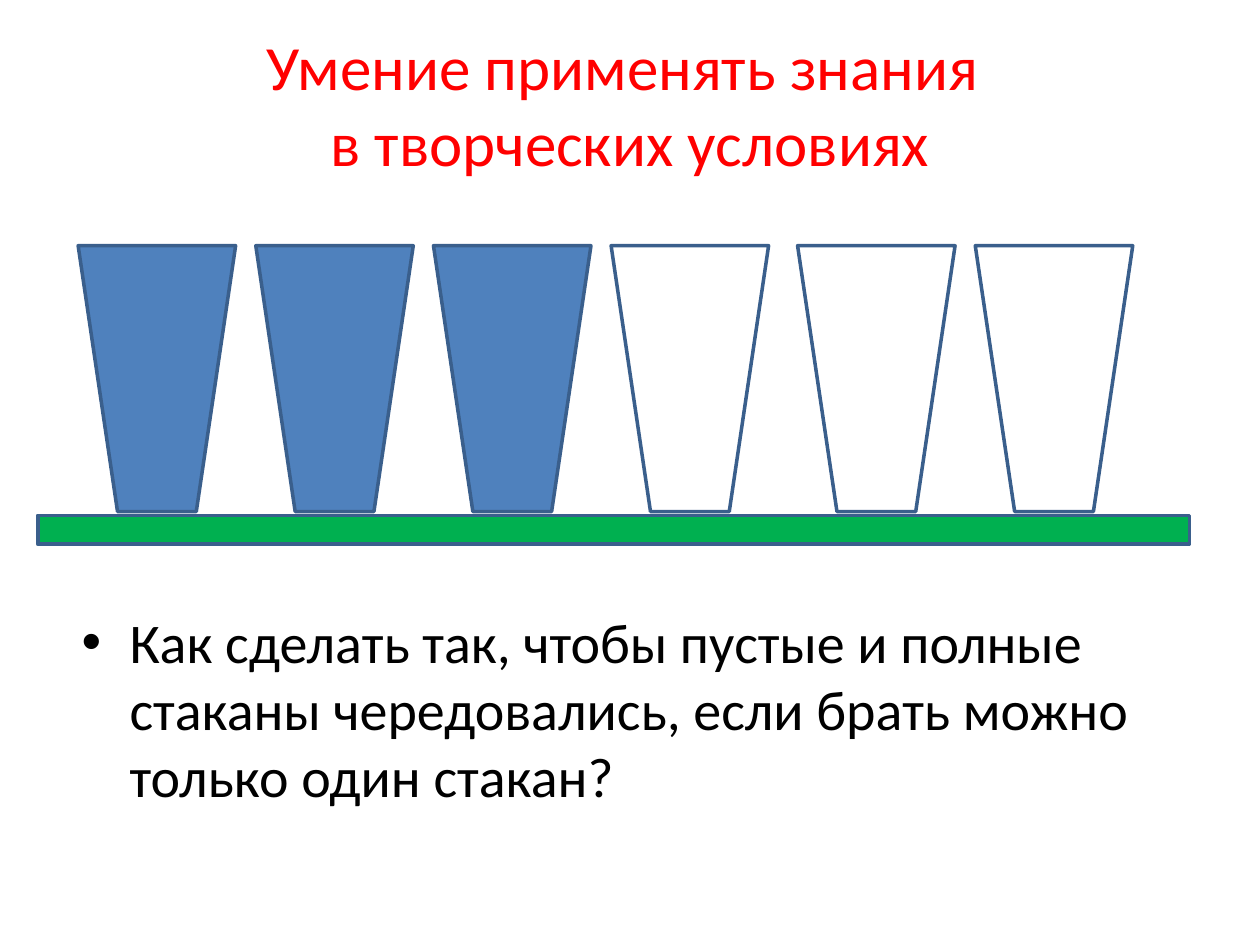
import pptx
import pptx.util
import pptx.dml.color
import pptx.enum.shapes
import pptx.enum.text
import lxml.etree
from dataclasses import dataclass

Inches = pptx.util.Inches
Pt = pptx.util.Pt
Shape = pptx.enum.shapes.MSO_SHAPE
Align = pptx.enum.text.PP_ALIGN
Anchor = pptx.enum.text.MSO_ANCHOR


@dataclass(frozen=True)
class Theme:
    font: str = "Calibri"
    title_size: int = 36
    question_size: int = 32
    outline_width: int = 2
    title: str = "FF0000"
    text: str = "000000"
    water: str = "4F81BD"
    table: str = "00B050"
    outline: str = "3A5F8C"


THEME = Theme()
FULL_GLASSES, GLASSES = 3, 6
GLASS_LEFT, GLASS_PITCH = 0.62, 1.41
SECOND_GROUP_START, SECOND_GROUP_SHIFT = 4, 0.07


def color(value):
    return pptx.dml.color.RGBColor.from_string(value)


def set_format(target, values):
    for name, value in values.items():
        setattr(target, name, value)


def add_outlined(slide, preset, box, fill=None):
    shape = slide.shapes.add_shape(preset, *map(Inches, box))
    shape.shadow.inherit = False
    if fill:
        shape.fill.solid()
        shape.fill.fore_color.rgb = color(fill)
    else:
        shape.fill.background()
    shape.line.color.rgb = color(THEME.outline)
    shape.line.width = Pt(THEME.outline_width)
    return shape


def add_text(slide, box, text, size, ink, frame_format, align):
    frame = slide.shapes.add_textbox(*map(Inches, box)).text_frame
    set_format(frame, {"word_wrap": True, **frame_format})
    paragraph = frame.paragraphs[0]
    paragraph.text = text
    paragraph.alignment = align
    for run in paragraph.runs:
        set_format(run.font, {"name": THEME.font, "size": Pt(size)})
        run.font.color.rgb = color(ink)
    return paragraph


def add_bullet(paragraph, indent):
    properties = paragraph._p.get_or_add_pPr()
    properties.set("marL", str(Inches(indent)))
    properties.set("indent", str(-Inches(indent)))
    for tag, key, value in (("buFont", "typeface", "Arial"), ("buChar", "char", "•")):
        name = pptx.oxml.ns.qn(f"a:{tag}")
        lxml.etree.SubElement(properties, name).set(key, value)


def add_glasses(slide):
    for index in range(GLASSES):
        left = GLASS_LEFT + index * GLASS_PITCH
        if index >= SECOND_GROUP_START:
            left += SECOND_GROUP_SHIFT
        fill = THEME.water if index < FULL_GLASSES else None
        glass = add_outlined(slide, Shape.TRAPEZOID, (left, 1.95, 1.25, 2.11), fill)
        glass.rotation = 180


def main():
    deck = pptx.Presentation()
    set_format(deck, {"slide_width": Inches(10), "slide_height": Inches(7.5)})
    slide = deck.slides.add_slide(deck.slide_layouts[6])

    add_text(slide, (0.5, 0.3, 9, 1.25),
             "Умение применять знания \vв творческих условиях",
             THEME.title_size, THEME.title,
             {"vertical_anchor": Anchor.MIDDLE, "margin_top": 0,
              "margin_bottom": Inches(0.21)},
             Align.CENTER)
    question = add_text(slide, (0.55, 4.77, 9, 2.17),
                        "Как сделать так, чтобы пустые и полные стаканы "
                        "чередовались, если брать можно только один стакан?",
                        THEME.question_size, THEME.text,
                        {"vertical_anchor": Anchor.TOP}, Align.LEFT)
    add_bullet(question, 0.38)

    add_glasses(slide)
    add_outlined(slide, Shape.RECTANGLE, (0.3, 4.09, 9.14, 0.23), THEME.table)
    deck.save("out.pptx")


if __name__ == "__main__":
    main()
